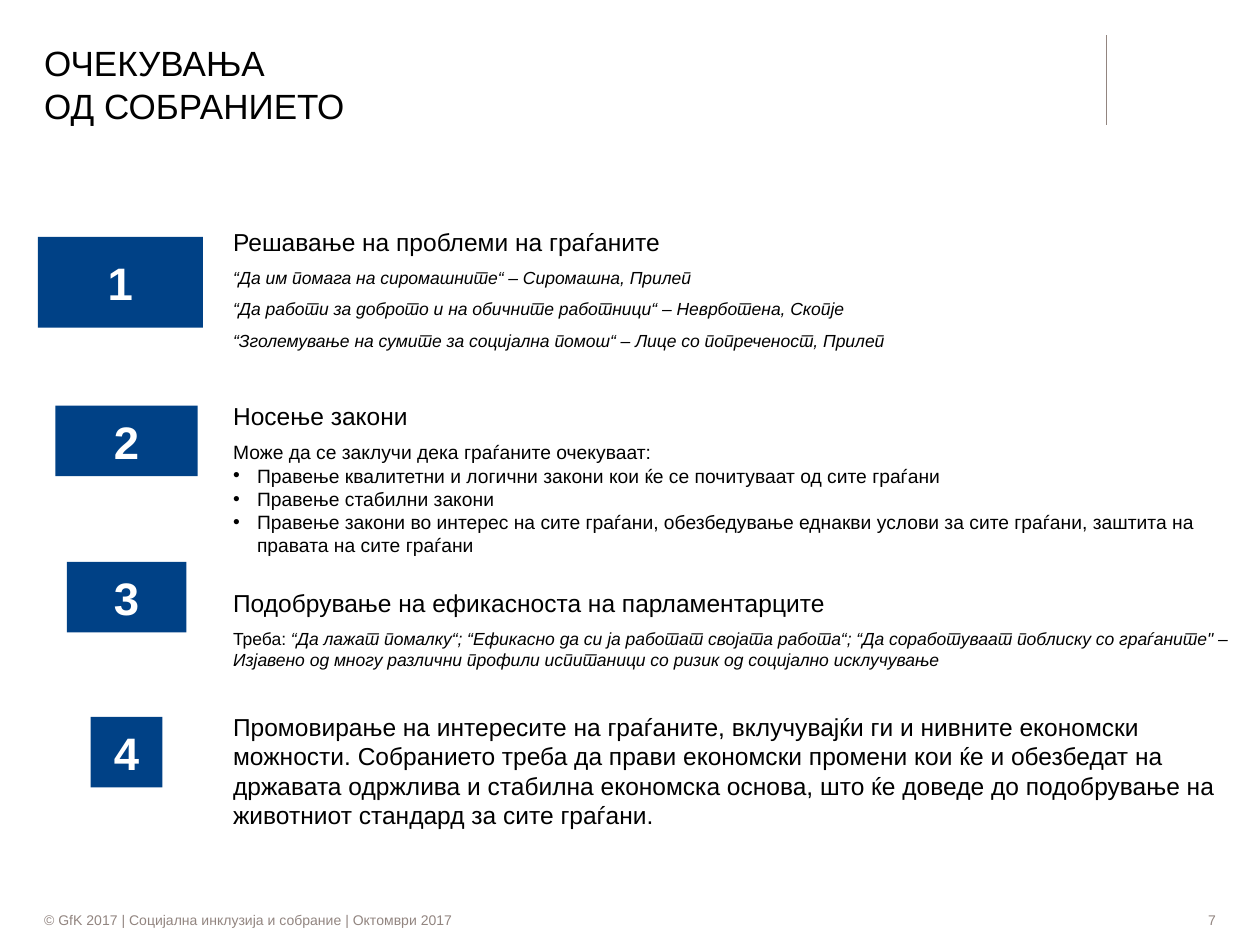
from lxml.etree import SubElement
from pptx import Presentation
from pptx.dml.color import RGBColor
from pptx.enum.shapes import MSO_CONNECTOR, MSO_SHAPE
from pptx.enum.text import MSO_ANCHOR, PP_ALIGN
from pptx.oxml.ns import qn
from pptx.util import Inches, Pt

BLACK = RGBColor(0x00, 0x00, 0x00)
WHITE = RGBColor(0xFF, 0xFF, 0xFF)
NAVY = RGBColor(0x00, 0x41, 0x86)
GREY = RGBColor(0x92, 0x85, 0x80)


def write(paragraph, text, size=14, color=BLACK, bold=False, italic=False,
          align=PP_ALIGN.LEFT, before=0, bullet=False, lead=""):
    properties = paragraph._p.get_or_add_pPr()
    if bullet:
        properties.set("marL", str(Inches(0.19)))
        properties.set("indent", str(-Inches(0.19)))
        SubElement(properties, qn("a:buFont")).set("typeface", "Arial")
        SubElement(properties, qn("a:buChar")).set("char", "•")
    paragraph.alignment = align
    paragraph.space_before = Pt(before)
    pieces = [(lead, False)] if lead else []
    for index, line in enumerate(text.split("\n")):
        pieces += [(None, False)] if index else []
        pieces.append((line, italic))
    for words, slanted in pieces:
        if words is None:
            paragraph.add_line_break()
            continue
        run = paragraph.add_run()
        run.text = words
        run._r.get_or_add_rPr().set("lang", "mk-MK")
        run.font.name = "Arial"
        run.font.size = Pt(size)
        run.font.bold = bold
        run.font.italic = slanted
        run.font.color.rgb = color


class SlideBuilder:
    def __init__(self, slide, accent=NAVY, muted=GREY):
        self.shapes = slide.shapes
        self.accent = accent
        self.muted = muted

    def text(self, left, top, width, height, paragraphs,
             anchor=MSO_ANCHOR.TOP, inset_top=0):
        box = self.shapes.add_textbox(Inches(left), Inches(top),
                                      Inches(width), Inches(height))
        frame = box.text_frame
        frame.word_wrap = True
        frame.vertical_anchor = anchor
        frame.margin_left = frame.margin_right = frame.margin_bottom = 0
        frame.margin_top = Inches(inset_top)
        for index, (words, style) in enumerate(paragraphs):
            paragraph = frame.add_paragraph() if index else frame.paragraphs[0]
            write(paragraph, words, **style)
        return box

    def footer(self, left, width, words, align=PP_ALIGN.LEFT):
        style = dict(size=8, color=self.muted, align=align)
        strip = self.text(left, 7.22, width, 0.16, [(words, style)], MSO_ANCHOR.MIDDLE)
        strip.fill.solid()
        strip.fill.fore_color.rgb = WHITE

    def number(self, left, top, width, height, digit):
        tile = self.shapes.add_shape(MSO_SHAPE.RECTANGLE, Inches(left), Inches(top),
                                     Inches(width), Inches(height))
        tile.shadow.inherit = False
        tile.fill.solid()
        tile.fill.fore_color.rgb = self.accent
        tile.line.fill.background()
        frame = tile.text_frame
        frame.vertical_anchor = MSO_ANCHOR.MIDDLE
        write(frame.paragraphs[0], digit, size=26, color=WHITE, bold=True,
              align=PP_ALIGN.CENTER)

    def rule(self, x, top, bottom):
        line = self.shapes.add_connector(MSO_CONNECTOR.STRAIGHT, Inches(x), Inches(top),
                                         Inches(x), Inches(bottom))
        line.line.color.rgb = self.muted
        line.line.width = Pt(0.75)
        SubElement(line._element.spPr, qn("a:effectLst"))


def main():
    presentation = Presentation()
    presentation.slide_width = Inches(10)
    presentation.slide_height = Inches(7.5)
    builder = SlideBuilder(presentation.slides.add_slide(presentation.slide_layouts[6]))

    builder.rule(8.78, 0.28, 0.99)
    builder.footer(0.35, 7.72, "© GfK 2017 | Социјална инклузија и собрание | Октомври 2017")
    builder.footer(8.23, 1.42, "7", PP_ALIGN.RIGHT)
    builder.text(0.35, 0.29, 6.35, 0.71, [("ОЧЕКУВАЊА\nОД СОБРАНИЕТО", dict(size=20))],
                 MSO_ANCHOR.BOTTOM)

    quote = dict(size=10, italic=True, before=6)
    point = dict(size=11, bullet=True)
    expectations = [
        ("Решавање на проблеми на граѓаните", {}),
        ("“Да им помага на сиромашните“ – Сиромашна, Прилеп", quote),
        ("“Да работи за доброто и на обичните работници“ – Неврботена, Скопје", quote),
        ("“Зголемување на сумите за социјална помош“ – Лице со попреченост, Прилеп", quote),
        ("Носење закони", dict(before=28.5)),
        ("Може да се заклучи дека граѓаните очекуваат:", dict(size=11, before=6)),
        ("Правење квалитетни и логични закони кои ќе се почитуваат од сите граѓани", point),
        ("Правење стабилни закони", point),
        ("Правење закони во интерес на сите граѓани, обезбедување еднакви услови "
         "за сите граѓани, заштита на правата на сите граѓани", point),
        ("Подобрување на ефикасноста на парламентарците", dict(before=18)),
        ("“Да лажат помалку“; “Ефикасно да си ја работат својата работа“; "
         "“Да соработуваат поблиску со граѓаните\" – Изјавено од многу различни "
         "профили испитаници со ризик од социјално исклучување",
         dict(quote, lead="Треба: ")),
        ("Промовирање на интересите на граѓаните, вклучувајќи ги и нивните економски "
         "можности. Собранието треба да прави економски промени кои ќе и обезбедат на "
         "државата одржлива и стабилна економска основа, што ќе доведе до подобрување "
         "на животниот стандард за сите граѓани.", dict(before=24)),
    ]
    builder.text(1.85, 1.78, 8.15, 4.85, expectations, inset_top=0.02)

    tiles = [(0.3, 1.88, 1.31, 0.72), (0.44, 3.22, 1.13, 0.56),
             (0.53, 4.46, 0.95, 0.56), (0.72, 5.69, 0.57, 0.56)]
    for digit, tile in enumerate(tiles, start=1):
        builder.number(*tile, str(digit))

    presentation.save("out.pptx")


if __name__ == "__main__":
    main()
